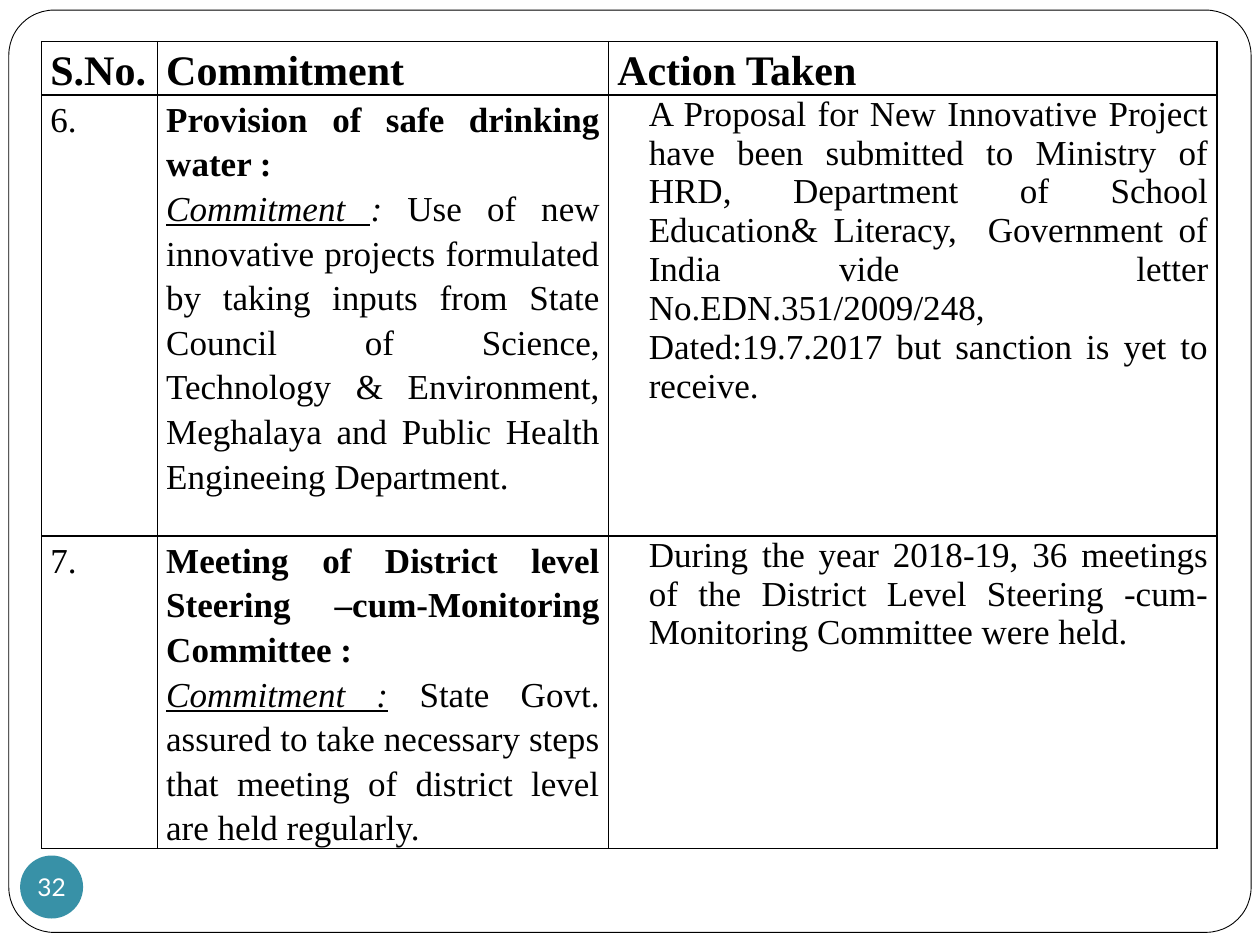
from lxml.etree import SubElement as Sub
from pptx import Presentation
from pptx.dml.color import RGBColor as RGB
from pptx.enum.shapes import MSO_SHAPE as Kind
from pptx.enum.text import MSO_ANCHOR as Anchor, PP_ALIGN as Align
from pptx.oxml.ns import qn
from pptx.util import Inches as In, Pt

THEME = {
    "ink": RGB.from_string("000000"),
    "paper": RGB.from_string("FFFFFF"),
    "badge": RGB.from_string("3891A7"),
    "serif": "Times New Roman", "sans": "Lato",
    "head": Pt(24), "body": Pt(20), "page": Pt(14),
}


def add_run(para, text, size, face="serif", ink="ink", style=""):
    """Add one run; style holds any of b, i and u."""
    run = para.add_run()
    run.text = text
    font = run.font
    font.name, font.size = THEME[face], THEME[size]
    font.color.rgb = THEME[ink]
    font.bold, font.italic, font.underline = (c in style for c in "biu")


def rule_cell(cell):
    """Draw a thin line on all four sides of a cell."""
    props = cell._tc.get_or_add_tcPr()
    for at, side in enumerate(("lnL", "lnR", "lnT", "lnB")):
        line = Sub(props, qn("a:" + side), w=str(Pt(1)))
        fill = Sub(line, qn("a:solidFill"))
        Sub(fill, qn("a:srgbClr"), val=str(THEME["ink"]))
        props.remove(line)
        props.insert(at, line)


deck = Presentation()
deck.slide_width, deck.slide_height = In(10), In(7.5)
slide = deck.slides.add_slide(deck.slide_layouts[6])
shapes = slide.shapes

# Rounded page frame
frame = shapes.add_shape(Kind.ROUNDED_RECTANGLE, In(0.07), In(0.08), In(9.86), In(7.32))
frame.adjustments[0] = 0.049
frame.shadow.inherit = False
frame.fill.solid()
frame.fill.fore_color.rgb = THEME["paper"]
frame.line.color.rgb = THEME["ink"]
frame.line.width = Pt(0.5)

# Page number badge
badge = shapes.add_shape(Kind.OVAL, In(0.16), In(6.79), In(0.5), In(0.5))
badge.shadow.inherit = False
badge.fill.solid()
badge.fill.fore_color.rgb = THEME["badge"]
badge.line.fill.background()
text = badge.text_frame
text.margin_left = text.margin_right = text.margin_top = text.margin_bottom = 0
text.word_wrap = False
text.vertical_anchor = Anchor.MIDDLE
text.paragraphs[0].alignment = Align.CENTER
add_run(text.paragraphs[0], "32", "page", "sans", "paper")

# Table content: rows > cells > paragraphs > (text, style) runs
ROWS = [
    [[[("S.No.", "b")]], [[("Commitment", "b")]], [[("Action Taken", "b")]]],
    [
        [[("6.", "")]],
        [[("Provision of safe drinking water :", "b")],
         [("Commitment ", "iu"), (": ", "i"),
          ("Use of new innovative projects formulated by taking inputs from "
           "State Council of Science, Technology & Environment, Meghalaya and "
           "Public Health Engineeing Department.", "")]],
        [[("A Proposal for New Innovative Project have been submitted to "
           "Ministry of HRD, Department of School Education& Literacy,  "
           "Government of India vide  letter No.EDN.351/2009/248, "
           "Dated:19.7.2017 but sanction is yet to receive.", "")]],
    ],
    [
        [[("7.", "")]],
        [[("Meeting of District level Steering –cum-Monitoring Committee :", "b")],
         [("Commitment :", "iu"), (" ", "i"),
          ("State Govt. assured to take necessary steps that meeting of "
           "district level are held regularly.", "")]],
        [[("During the year 2018-19, 36 meetings of the District Level "
           "Steering -cum- Monitoring Committee were held.", "")]],
    ],
]
WIDE, HIGH = [0.92, 3.58, 4.83], [0.4, 3.5, 2.44]

# Commitments table
table = shapes.add_table(len(HIGH), len(WIDE), In(0.33), In(0.33),
                         In(sum(WIDE)), In(sum(HIGH))).table
table.first_row = table.horz_banding = False
for col, width in zip(table.columns, WIDE):
    col.width = In(width)
for row, height in zip(table.rows, HIGH):
    row.height = In(height)

for r, row in enumerate(ROWS):
    for c, paras in enumerate(row):
        cell = table.cell(r, c)
        cell.fill.background()
        rule_cell(cell)
        cell.margin_left = cell.margin_right = In(0.07)
        cell.margin_top = cell.margin_bottom = 0
        cell.vertical_anchor = Anchor.TOP if r else Anchor.MIDDLE
        for n, runs in enumerate(paras):
            text = cell.text_frame
            para = text.add_paragraph() if n else text.paragraphs[0]
            para.alignment = Align.JUSTIFY
            if r and c == 2:  # indented action text
                para._p.get_or_add_pPr().set("marL", str(In(0.25)))
                para.space_before = para.space_after = Pt(12)
            else:
                para.line_spacing = 1.15
            for words, style in runs:
                add_run(para, words, "body" if r else "head", style=style)

deck.save("out.pptx")
